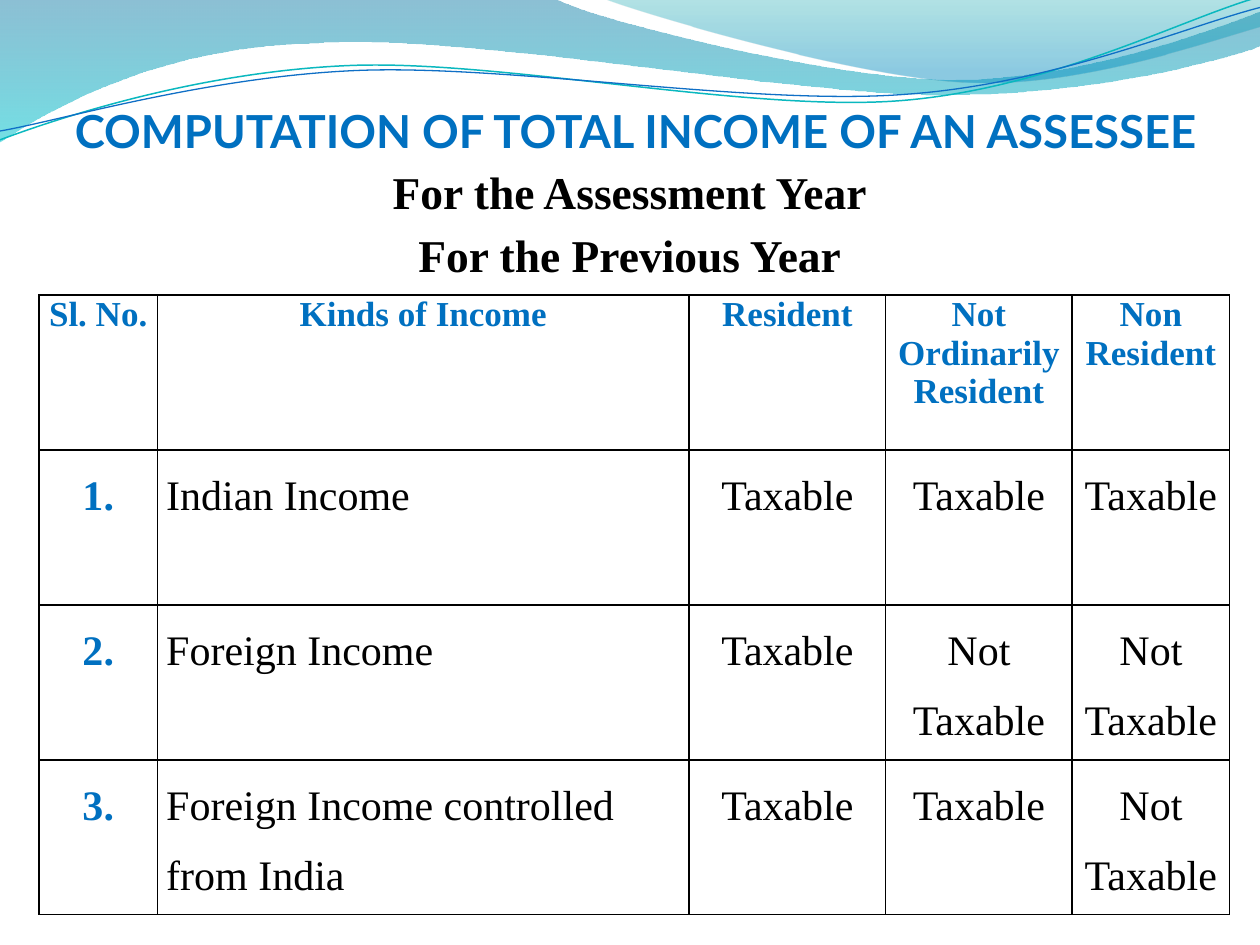
import math

from lxml import etree
from pptx import Presentation
from pptx import util as u
from pptx.dml.color import RGBColor
from pptx.enum import text
from pptx.oxml import ns

BLUE = RGBColor(0x00, 0x70, 0xC0)
BLACK = RGBColor(0x00, 0x00, 0x00)
DEEP_BLUE = RGBColor(0x00, 0x74, 0xA1)
CYAN = RGBColor(0x00, 0xC6, 0xCF)
TEAL = RGBColor(0x00, 0xA1, 0xA9)
SKY = RGBColor(0x00, 0x8B, 0xBF)
TEAL_LINE = RGBColor(0x0A, 0xB8, 0xBF)
BLUE_LINE = RGBColor(0x0F, 0x6F, 0xC6)

CENTER, LEFT = text.PP_ALIGN.CENTER, text.PP_ALIGN.LEFT
STRAND_TILT = -2.7

# Each outline is a start point followed by segments:
# one point for a straight line, three points for a cubic curve.
LEFT_WAVE = [
    [(0, 0)], [(4.4, -0.01)],
    [(4.76, 0.17), (6.64, 0.63), (7.58, 0.63)],
    [(8.53, 0.63), (9.58, 0.26), (10, 0.09)],
    [(10.01, 0.36)],
    [(9.83, 0.44), (8.7, 0.76), (7.46, 0.75)],
    [(6.22, 0.75), (3.82, 0.28), (2.57, 0.34)],
    [(1.29, 0.36), (0.46, 0.83), (-0.01, 1.13)],
]
RIGHT_WAVE = [
    [(4.79, -0.01)],
    [(5.09, 0.11), (6.82, 0.62), (7.69, 0.65)],
    [(8.56, 0.69), (9.61, 0.32), (10, 0.21)],
    [(10, 0)],
]
TEAL_STRAND = [
    [(0, 1.11)],
    [(0.48, 0.93), (1.58, 0.57), (2.77, 0.52)],
    [(3.95, 0.47), (5.93, 0.89), (7.13, 0.8)],
    [(8.33, 0.71), (9.38, 0.15), (9.98, -0.02)],
]
BLUE_STRAND = [
    [(0, 1.04)],
    [(0.47, 0.96), (1.64, 0.61), (2.83, 0.56)],
    [(4.03, 0.51), (5.97, 0.84), (7.17, 0.75)],
    [(8.36, 0.67), (9.41, 0.21), (10, 0.06)],
]

COLUMN_WIDTHS = [0.94, 4.22, 1.56, 1.48, 1.25]
ROW_HEIGHT = 1.23
INCOME_ROWS = [
    ["Sl. No.", "Kinds of Income", "Resident", "Not Ordinarily Resident", "Non Resident"],
    ["1.", "Indian Income", "Taxable", "Taxable", "Taxable"],
    ["2.", "Foreign Income", "Taxable", "Not Taxable", "Not Taxable"],
    ["3.", "Foreign Income controlled from India", "Taxable", "Taxable", "Not Taxable"],
]


def rotate(curve, pivot, degrees):
    """Turn every point clockwise about the pivot."""
    cos, sin = math.cos(math.radians(degrees)), math.sin(math.radians(degrees))
    px, py = pivot
    return [[(px + (x - px) * cos - (y - py) * sin,
              py + (x - px) * sin + (y - py) * cos) for x, y in segment]
            for segment in curve]


class IncomeSlide:
    heading_font = "Lato"
    text_font = "Times New Roman"

    def __init__(self, deck):
        self.slide = deck.slides.add_slide(deck.slide_layouts[1])

    def place(self, shape, left, top, width, height):
        shape.left, shape.top = u.Inches(left), u.Inches(top)
        shape.width, shape.height = u.Inches(width), u.Inches(height)

    def format(self, paragraph, size, color, bold, font, align=CENTER, spacing=None):
        paragraph.alignment = align
        paragraph.line_spacing = spacing
        paragraph.font.name = font
        paragraph.font.size = u.Pt(size)
        paragraph.font.bold = bold
        paragraph.font.color.rgb = color

    def outline(self, curve, closed):
        """Draw lines and cubic curves behind the text placeholders."""
        start, *rest = [(u.Inches(x), u.Inches(y)) for segment in curve for x, y in segment]
        builder = self.slide.shapes.build_freeform(*start)
        builder.add_line_segments(rest, close=closed)
        shape = builder.convert_to_shape()
        shape.shadow.inherit = False
        lines = iter(list(shape._element.iter(ns.qn("a:lnTo"))))
        for segment in curve[1:]:
            steps = [next(lines) for _ in segment]
            if len(steps) == 3:
                bezier = etree.Element(ns.qn("a:cubicBezTo"))
                steps[0].addprevious(bezier)
                for step in steps:
                    bezier.append(step[0])
                    step.getparent().remove(step)
        self.slide.shapes.title._element.addprevious(shape._element)
        return shape

    def wave(self, curve, stops):
        """Fill an outline top to bottom; stops are (position, color, opacity %)."""
        shape = self.outline(curve, closed=True)
        shape.line.fill.background()
        shape.fill.gradient()
        shape.fill.gradient_angle = 270
        for stop, (position, color, _) in zip(shape.fill.gradient_stops, stops):
            stop.position = position
            stop.color.rgb = color
        colors = shape._element.spPr.iter(ns.qn("a:srgbClr"))
        for color, (_, _, opacity) in zip(colors, stops):
            etree.SubElement(color, ns.qn("a:alpha"), val=str(opacity * 1000))

    def strand(self, curve, pivot, color, weight):
        shape = self.outline(rotate(curve, pivot, -STRAND_TILT), closed=False)
        shape.rotation = STRAND_TILT
        shape.fill.background()
        shape.line.color.rgb = color
        shape.line.width = u.Pt(weight)

    def title(self, wording):
        title = self.slide.shapes.title
        self.place(title, 0.55, 0, 9, 1.25)
        frame = title.text_frame
        frame.text = wording
        frame.vertical_anchor = text.MSO_ANCHOR.BOTTOM
        frame.margin_left = frame.margin_right = frame.margin_bottom = 0
        self.format(frame.paragraphs[0], 26, BLUE, True, self.heading_font, spacing=1.5)

    def body(self, lines):
        body = self.slide.placeholders[1]
        self.place(body, 0.5, 1.25, 9, 5.67)
        body.text_frame.text = "\n".join(lines)
        for paragraph in body.text_frame.paragraphs:
            properties = paragraph._p.get_or_add_pPr()
            properties.set("marL", str(u.Inches(0.3)))
            properties.set("indent", str(u.Inches(-0.3)))
            etree.SubElement(properties, ns.qn("a:buNone"))
            self.format(paragraph, 26, BLACK, True, self.text_font)

    def border(self, cell):
        properties = cell._tc.get_or_add_tcPr()
        for index, side in enumerate("LRTB"):
            line = etree.Element(ns.qn(f"a:ln{side}"), w=str(u.Pt(1)))
            fill = etree.SubElement(line, ns.qn("a:solidFill"))
            etree.SubElement(fill, ns.qn("a:srgbClr"), val=str(BLACK))
            properties.insert(index, line)

    def table(self, rows, left, top):
        frame = self.slide.shapes.add_table(
            len(rows), len(COLUMN_WIDTHS), u.Inches(left), u.Inches(top),
            u.Inches(sum(COLUMN_WIDTHS)), u.Inches(ROW_HEIGHT * len(rows)))
        table = frame.table
        table.first_row = table.horz_banding = False
        for column, width in zip(table.columns, COLUMN_WIDTHS):
            column.width = u.Inches(width)
        for r, row in enumerate(rows):
            for c, wording in enumerate(row):
                cell = table.cell(r, c)
                cell.text = wording
                cell.margin_left = cell.margin_right = u.Inches(0.07)
                cell.margin_top = cell.margin_bottom = 0
                cell.fill.background()
                self.border(cell)
                header = r == 0
                label = header or c == 0
                self.format(
                    cell.text_frame.paragraphs[0], 20 if header else 24,
                    BLUE if label else BLACK, label, self.text_font,
                    LEFT if c == 1 and not header else CENTER,
                    None if header else 1.5)


def main():
    deck = Presentation()
    deck.slide_width, deck.slide_height = u.Inches(10), u.Inches(7.5)
    page = IncomeSlide(deck)
    page.wave(LEFT_WAVE, [(0, DEEP_BLUE, 45), (1, CYAN, 55)])
    page.wave(RIGHT_WAVE, [(0, TEAL, 30), (0.8, SKY, 45)])
    page.strand(TEAL_STRAND, (4.99, 0.58), TEAL_LINE, 0.85)
    page.strand(BLUE_STRAND, (5, 0.59), BLUE_LINE, 0.75)
    page.title("COMPUTATION OF TOTAL INCOME OF AN ASSESSEE")
    page.body(["For the Assessment Year", "For the Previous Year"])
    page.table(INCOME_ROWS, 0.31, 2.34)
    deck.save("out.pptx")


if __name__ == "__main__":
    main()
